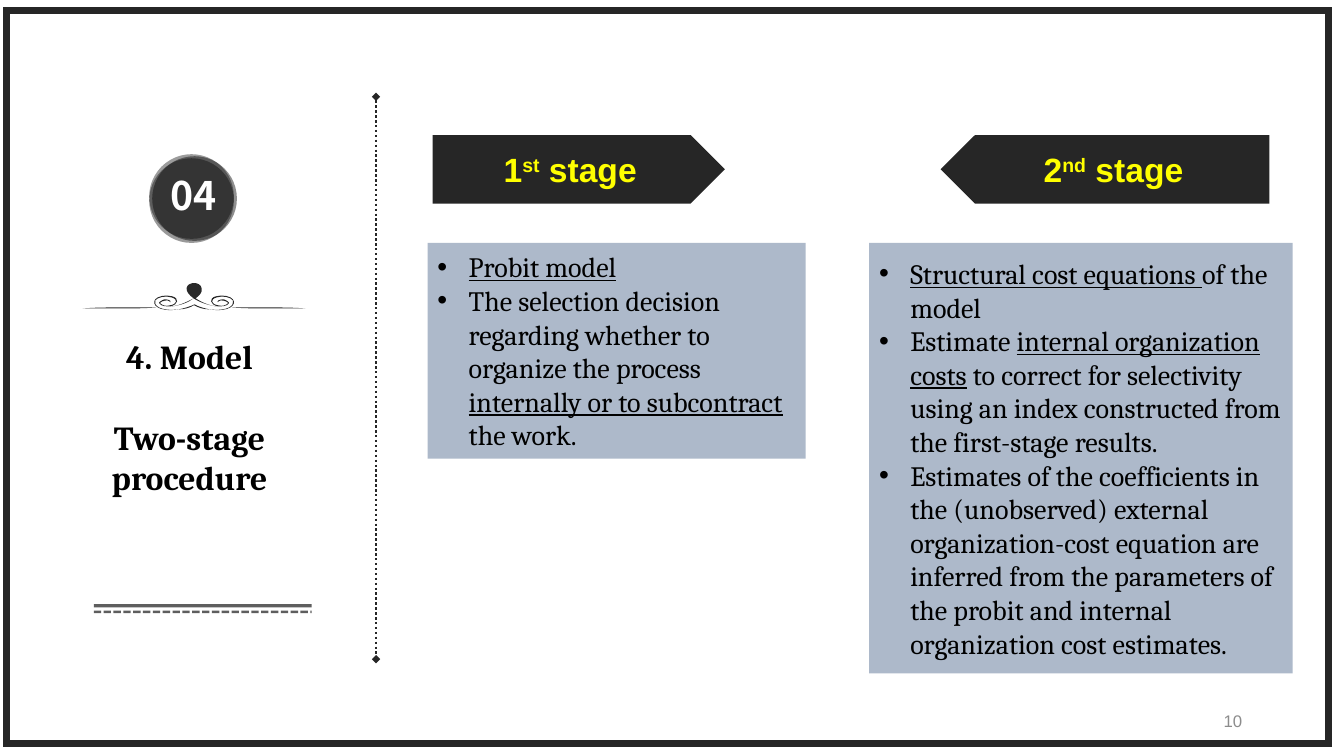
from lxml.etree import SubElement
from pptx import Presentation
from pptx.dml.color import RGBColor
from pptx.enum.dml import MSO_LINE_DASH_STYLE as Dash
from pptx.enum.shapes import MSO_CONNECTOR as Connector, MSO_SHAPE as Shape
from pptx.enum.text import MSO_ANCHOR as Anchor, MSO_AUTO_SIZE as AutoSize, PP_ALIGN as Align
from pptx.oxml.ns import qn
from pptx.util import Inches, Pt

BLACK = RGBColor(0x00, 0x00, 0x00)
CHARCOAL = RGBColor(0x26, 0x26, 0x26)
DARK_GRAY = RGBColor(0x40, 0x40, 0x40)
GRAY = RGBColor(0x8C, 0x8C, 0x8C)
BLUE_GRAY = RGBColor(0xAD, 0xB9, 0xCA)
YELLOW = RGBColor(0xFF, 0xFF, 0x00)
WHITE = RGBColor(0xFF, 0xFF, 0xFF)
SERIF, SANS, NUMERAL = "Cambria", "Arial", "Noto Sans CJK SC"
UNDERLINE, SUPERSCRIPT = "underline", "superscript"

# Each outline is a start point followed by cubic curves (control, control, end).
ORNAMENT_CENTER = 1.925
HEART = [(1.92, 2.96),
         (1.88, 2.93), (1.85, 2.9), (1.85, 2.86), (1.86, 2.79), (1.99, 2.79), (2, 2.86),
         (2.01, 2.9), (1.98, 2.93), (1.94, 2.96), (1.99, 2.99), (2.06, 3.03), (2.15, 3.04),
         (2.07, 3.03), (1.98, 3), (1.92, 2.96), (1.87, 3), (1.79, 3.03), (1.7, 3.04),
         (1.79, 3.03), (1.86, 2.99), (1.92, 2.96)]
RIGHT_WING = [(2.66, 3.06),
              (2.55, 3.06), (2.42, 3.06), (2.3, 3.05), (2.43, 3.05), (2.55, 3.05), (2.66, 3.05),
              (2.78, 3.05), (2.9, 3.05), (3.03, 3.06), (2.9, 3.06), (2.66, 3.06), (2.66, 3.06)]
RIGHT_SCROLL = [(1.93, 3.03),
                (1.96, 3.05), (2.02, 3.07), (2.08, 3.07), (2.28, 3.1), (2.35, 3.02), (2.31, 2.97),
                (2.29, 2.94), (2.21, 2.92), (2.14, 2.94), (2.07, 2.96), (2.08, 3.02), (2.16, 3.04),
                (2.2, 3.04), (2.25, 3.04), (2.27, 3.01), (2.28, 3), (2.25, 2.98), (2.22, 2.97),
                (2.18, 2.97), (2.15, 2.98), (2.16, 3), (2.16, 3), (2.17, 2.98), (2.19, 2.98),
                (2.23, 2.98), (2.27, 3), (2.26, 3.01), (2.24, 3.03), (2.2, 3.04), (2.17, 3.03),
                (2.09, 3.02), (2.08, 2.97), (2.15, 2.95), (2.21, 2.93), (2.29, 2.95), (2.31, 2.98),
                (2.33, 3.03), (2.26, 3.09), (2.08, 3.07), (2.03, 3.06), (1.96, 3.04), (1.93, 3.02)]


def mirror(points):
    return [(2 * ORNAMENT_CENTER - x, y) for x, y in points]


def set_opacity(shape, percent):
    for color in shape.element.spPr.iter(qn("a:srgbClr")):
        SubElement(color, qn("a:alpha")).set("val", str(percent * 1000))


def curve_outline(shape):
    """Turn every three straight segments of a freeform into one cubic curve."""
    segments = list(shape.element.spPr.iter(qn("a:lnTo")))
    for i in range(0, len(segments), 3):
        curve = segments[i].makeelement(qn("a:cubicBezTo"))
        segments[i].addprevious(curve)
        for segment in segments[i:i + 3]:
            curve.append(segment[0])
            segment.getparent().remove(segment)


def write(frame, paragraphs, font=SERIF, size=20, color=BLACK, bold=False, align=Align.LEFT,
          anchor=Anchor.TOP, bullet=None, gap=0):
    """Fill a frame; each paragraph is a list of (text, style) runs."""
    frame.word_wrap = True
    frame.auto_size = AutoSize.NONE
    frame.vertical_anchor = anchor
    for number, runs in enumerate(paragraphs):
        paragraph = frame.add_paragraph() if number else frame.paragraphs[0]
        paragraph.alignment = align
        if number and gap:
            paragraph.space_before = Pt(gap)
        if bullet:
            properties = paragraph._p.get_or_add_pPr()
            properties.set("marL", str(Inches(0.31)))
            properties.set("indent", str(Inches(-0.31)))
            SubElement(properties, qn("a:buFont")).set("typeface", SANS)
            SubElement(properties, qn("a:buChar")).set("char", bullet)
        for text, style in runs:
            run = paragraph.add_run()
            run.text = text
            run.font.name, run.font.size, run.font.bold = font, Pt(size), bold
            run.font.color.rgb = color
            if style == UNDERLINE:
                run.font.underline = True
            elif style == SUPERSCRIPT:
                run._r.get_or_add_rPr().set("baseline", "30000")


class StageSlide:
    def __init__(self, presentation):
        self.slide = presentation.slides.add_slide(presentation.slide_layouts[5])
        self.shapes = self.slide.shapes

    def open_group(self):
        self.shapes = self.slide.shapes.add_group_shape().shapes

    def close_group(self):
        self.shapes = self.slide.shapes

    def title(self, box, paragraphs, **style):
        title = self.shapes.title
        title.left, title.top, title.width, title.height = map(Inches, box)
        write(title.text_frame, paragraphs, **style)

    def text(self, box, paragraphs, **style):
        write(self.shapes.add_textbox(*map(Inches, box)).text_frame, paragraphs, **style)

    def finish(self, shape, fill, opacity=None):
        shape.shadow.inherit = False
        shape.fill.solid()
        shape.fill.fore_color.rgb = fill
        shape.line.fill.background()
        if opacity:
            set_opacity(shape, opacity)
        return shape

    def shape(self, kind, box, fill, opacity=None):
        return self.finish(self.shapes.add_shape(kind, *map(Inches, box)), fill, opacity)

    def frame(self, box, color, width):
        border = self.shapes.add_shape(Shape.RECTANGLE, *map(Inches, box))
        border.shadow.inherit = False
        border.fill.background()
        border.line.color.rgb = color
        border.line.width = Pt(width)
        SubElement(border.line._get_or_add_ln(), qn("a:miter")).set("lim", "800000")

    def outline(self, points, fill, opacity):
        start, *rest = [(Inches(x), Inches(y)) for x, y in points]
        builder = self.shapes.build_freeform(*start)
        builder.add_line_segments(rest, close=True)
        curve_outline(self.finish(builder.convert_to_shape(), fill, opacity))

    def line(self, start, end, color, width, dash=Dash.SOLID, opacity=None, ends=None):
        line = self.shapes.add_connector(Connector.STRAIGHT, *map(Inches, (*start, *end)))
        line.line.color.rgb = color
        line.line.width = Pt(width)
        line.line.dash_style = dash
        if opacity:
            set_opacity(line, opacity)
        if ends:
            for tag in ("a:headEnd", "a:tailEnd"):
                SubElement(line.line._get_or_add_ln(), qn(tag)).set("type", ends)
        SubElement(line.element.spPr, qn("a:effectLst"))

    def stage(self, arrow_box, ordinal, suffix, panel_box, points, points_left=False):
        """Add a panel of bullets and the arrow heading above it."""
        panel = self.shape(Shape.RECTANGLE, panel_box, BLUE_GRAY)
        write(panel.text_frame, points, anchor=Anchor.MIDDLE, bullet="•")
        arrow = self.shape(Shape.PENTAGON, arrow_box, CHARCOAL)
        if points_left:
            arrow.element.spPr.find(qn("a:xfrm")).set("flipH", "1")
        write(arrow.text_frame, [[(ordinal, None), (suffix, SUPERSCRIPT), (" stage", None)]],
              font=SANS, size=24, color=YELLOW, bold=True, align=Align.CENTER,
              anchor=Anchor.MIDDLE)


def main():
    presentation = Presentation()
    presentation.slide_width, presentation.slide_height = Inches(13.33), Inches(7.5)
    page = StageSlide(presentation)
    page.frame((0.06, 0.1, 13.12, 7.28), CHARCOAL, 5)

    page.open_group()
    for left, top, opacity in ((1.48, 1.53, 39), (1.51, 1.55, 44), (1.48, 1.57, 40)):
        page.shape(Shape.OVAL, (left, top, 0.84, 0.84), BLACK, opacity)
    page.close_group()
    page.text((1.36, 1.65, 1.13, 0.57), [[("04", None)]], font=NUMERAL, size=28, color=WHITE,
              bold=True, align=Align.CENTER)

    page.open_group()
    page.line((0.93, 6.07), (3.09, 6.07), DARK_GRAY, 1.75, Dash.SQUARE_DOT, opacity=83)
    page.line((0.93, 6.01), (3.09, 6.01), DARK_GRAY, 2.25, opacity=83)
    page.open_group()
    scroll = RIGHT_SCROLL + mirror(RIGHT_SCROLL)[-2::-1]
    for points in (HEART, RIGHT_WING, mirror(RIGHT_WING), scroll):
        page.outline(points, BLACK, 84)
    page.close_group()

    page.title((0.54, 3.28, 2.68, 1.72),
               [[("4. Model", None)], [("Two-stage procedure", None)]],
               size=24, bold=True, align=Align.CENTER, gap=29)
    page.line((3.73, 0.96), (3.73, 6.54), CHARCOAL, 1.75, Dash.ROUND_DOT, ends="diamond")

    page.stage((4.29, 1.34, 2.9, 0.68), "1", "st", (4.24, 2.41, 3.75, 2.14), [
        [("Probit model", UNDERLINE)],
        [("The selection decision regarding whether to organize the process ", None),
         ("internally or to subcontract ", UNDERLINE), ("the work.", None)]])
    page.stage((9.33, 1.34, 3.26, 0.68), "2", "nd", (8.62, 2.41, 4.2, 4.27), [
        [("Structural cost equations ", UNDERLINE), ("of the model", None)],
        [("Estimate ", None), ("internal organization costs", UNDERLINE),
         (" to correct for selectivity using an index constructed from the first-stage results.",
          None)],
        [("Estimates of the coefficients in the (unobserved) external organization-cost equation "
          "are inferred from the parameters of the probit and internal organization cost "
          "estimates.", None)]], points_left=True)

    page.text((9.42, 6.95, 3, 0.4), [[("10", None)]], font=SANS, size=12, color=GRAY,
              align=Align.RIGHT, anchor=Anchor.MIDDLE)
    presentation.save("out.pptx")


if __name__ == "__main__":
    main()
